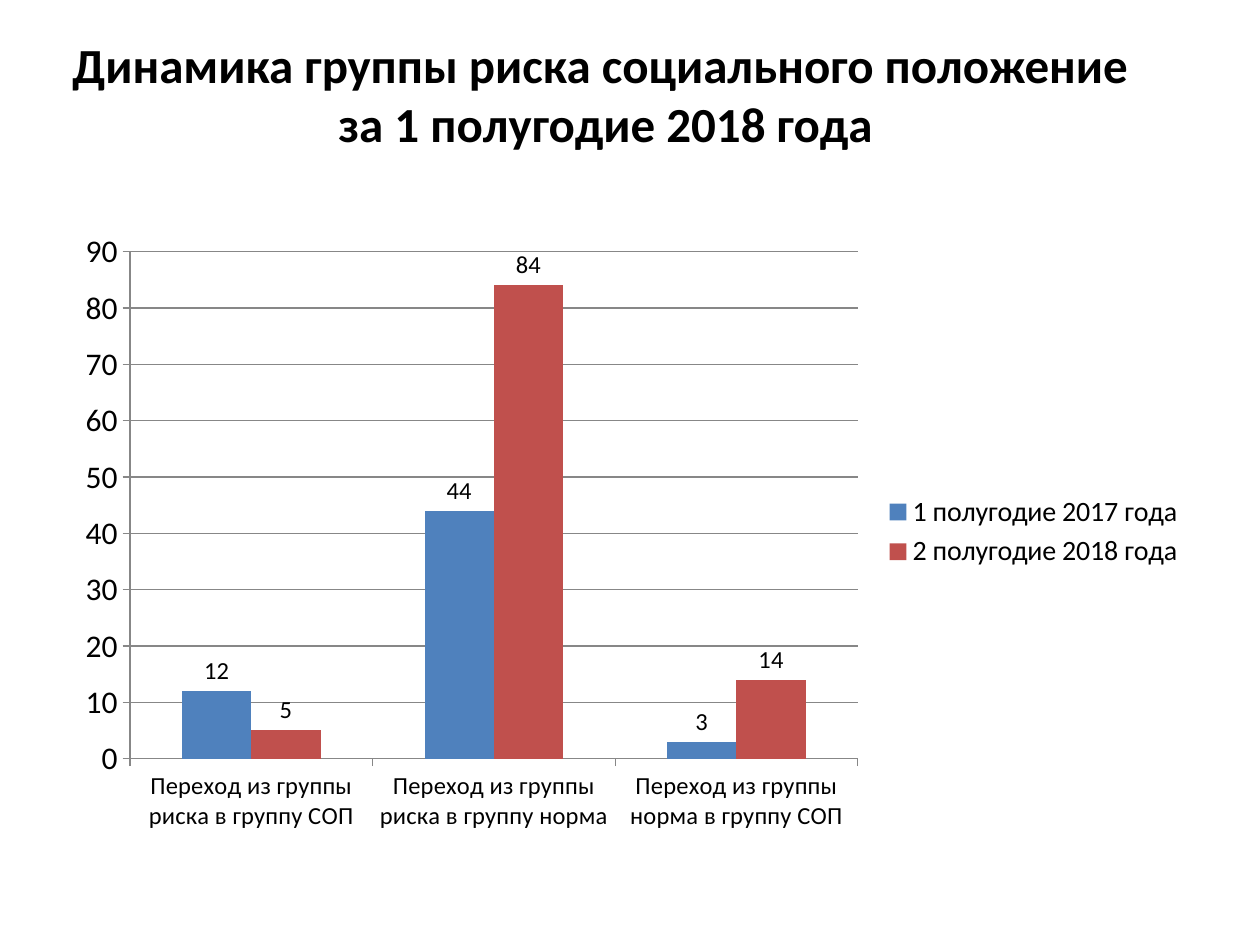
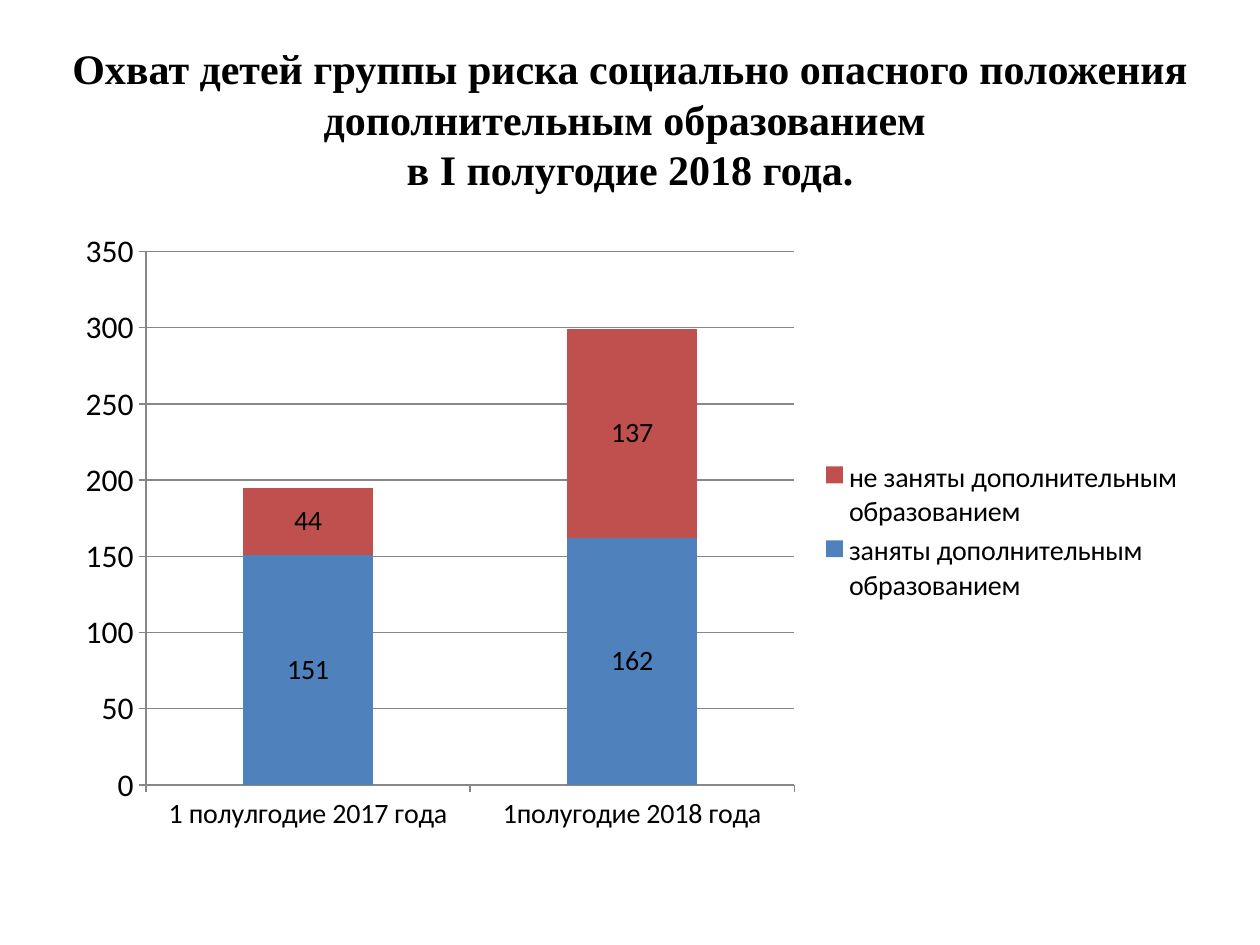
from pptx import Presentation
from pptx import util as u
from pptx.chart.data import CategoryChartData
from pptx.dml.color import RGBColor
from pptx.enum import chart as ch, text

PX_PER_INCH = 126
BLACK, GRID = "000000", "878787"
SERIES_COLOURS = ("4F81BD", "C0504D")
CHART_BOX = (63, 220, 1134, 624)


def px(length):
    return u.Inches(length / PX_PER_INCH)


def colour(value):
    return RGBColor.from_string(value)


def style_font(font, size, name="Calibri", bold=False):
    font.size, font.name, font.bold = u.Pt(size), name, bold
    font.color.rgb = colour(BLACK)


def add_text(slide, box, lines, size, **font_format):
    """Centred text; the lines share one paragraph."""
    frame = slide.shapes.add_textbox(*map(px, box)).text_frame
    frame.word_wrap = True
    frame.vertical_anchor = text.MSO_ANCHOR.MIDDLE
    paragraph = frame.paragraphs[0]
    paragraph.alignment = text.PP_ALIGN.CENTER
    for number, line in enumerate(lines):
        if number:
            paragraph.add_line_break()
        run = paragraph.add_run()
        run.text = line
        style_font(run.font, size, **font_format)


def style_axis_line(line):
    line.color.rgb = colour(GRID)
    line.width = u.Pt(0.75)


def add_column_chart(slide, box, kind, periods, series, label_size, label_place, overlap):
    data = CategoryChartData()
    data.categories = periods
    for name, values in series:
        data.add_series(name, values)
    chart = slide.shapes.add_chart(kind, *map(px, box), data).chart
    chart.has_title = False
    style_font(chart.font, 18)

    # Axes and grid
    for axis, size in ((chart.category_axis, label_size), (chart.value_axis, 18)):
        axis.major_tick_mark = ch.XL_TICK_MARK.OUTSIDE
        axis.minor_tick_mark = ch.XL_TICK_MARK.NONE
        style_axis_line(axis.format.line)
        style_font(axis.tick_labels.font, size)
    chart.value_axis.has_major_gridlines = True
    style_axis_line(chart.value_axis.major_gridlines.format.line)

    # Legend
    chart.has_legend = True
    chart.legend.position = ch.XL_LEGEND_POSITION.RIGHT
    chart.legend.include_in_layout = False
    style_font(chart.legend.font, 16)

    # Columns and their values
    plot = chart.plots[0]
    plot.gap_width, plot.overlap = 150, overlap
    plot.vary_by_categories = False
    for columns, fill in zip(plot.series, SERIES_COLOURS):
        columns.format.fill.solid()
        columns.format.fill.fore_color.rgb = colour(fill)
        columns.invert_if_negative = False
        labels = columns.data_labels
        labels.show_value = True
        labels.position = label_place
        style_font(labels.font, label_size)


def risk_group_slide(slide):
    add_text(slide, (0, 20, 1211, 147),
             ("Динамика группы риска социального положение ", "за 1 полугодие 2018 года"),
             28, bold=True)
    add_column_chart(
        slide, CHART_BOX, ch.XL_CHART_TYPE.COLUMN_CLUSTERED,
        ("Переход из группы риска в группу СОП",
         "Переход из группы риска в группу норма",
         "Переход из группы норма в группу СОП"),
        (("1 полугодие 2017 года", (12, 44, 3)),
         ("2 полугодие 2018 года", (5, 84, 14))),
        label_size=14, label_place=ch.XL_LABEL_POSITION.OUTSIDE_END, overlap=0)


def extra_education_slide(slide):
    add_text(slide, (39, 20, 1182, 197),
             ("Охват детей группы риска социально опасного положения "
              "дополнительным образованием ", "в I полугодие 2018 года."),
             24, name="Times New Roman", bold=True)
    add_column_chart(
        slide, CHART_BOX, ch.XL_CHART_TYPE.COLUMN_STACKED,
        ("1 полулгодие 2017 года", "1полугодие 2018 года"),
        (("заняты дополнительным образованием", (151, 162)),
         ("не заняты дополнительным образованием", (44, 137))),
        label_size=16, label_place=ch.XL_LABEL_POSITION.CENTER, overlap=100)


def main():
    deck = Presentation()
    deck.slide_width, deck.slide_height = px(1260), px(945)
    for build in (risk_group_slide, extra_education_slide):
        build(deck.slides.add_slide(deck.slide_layouts[6]))
    deck.save("out.pptx")


if __name__ == "__main__":
    main()
